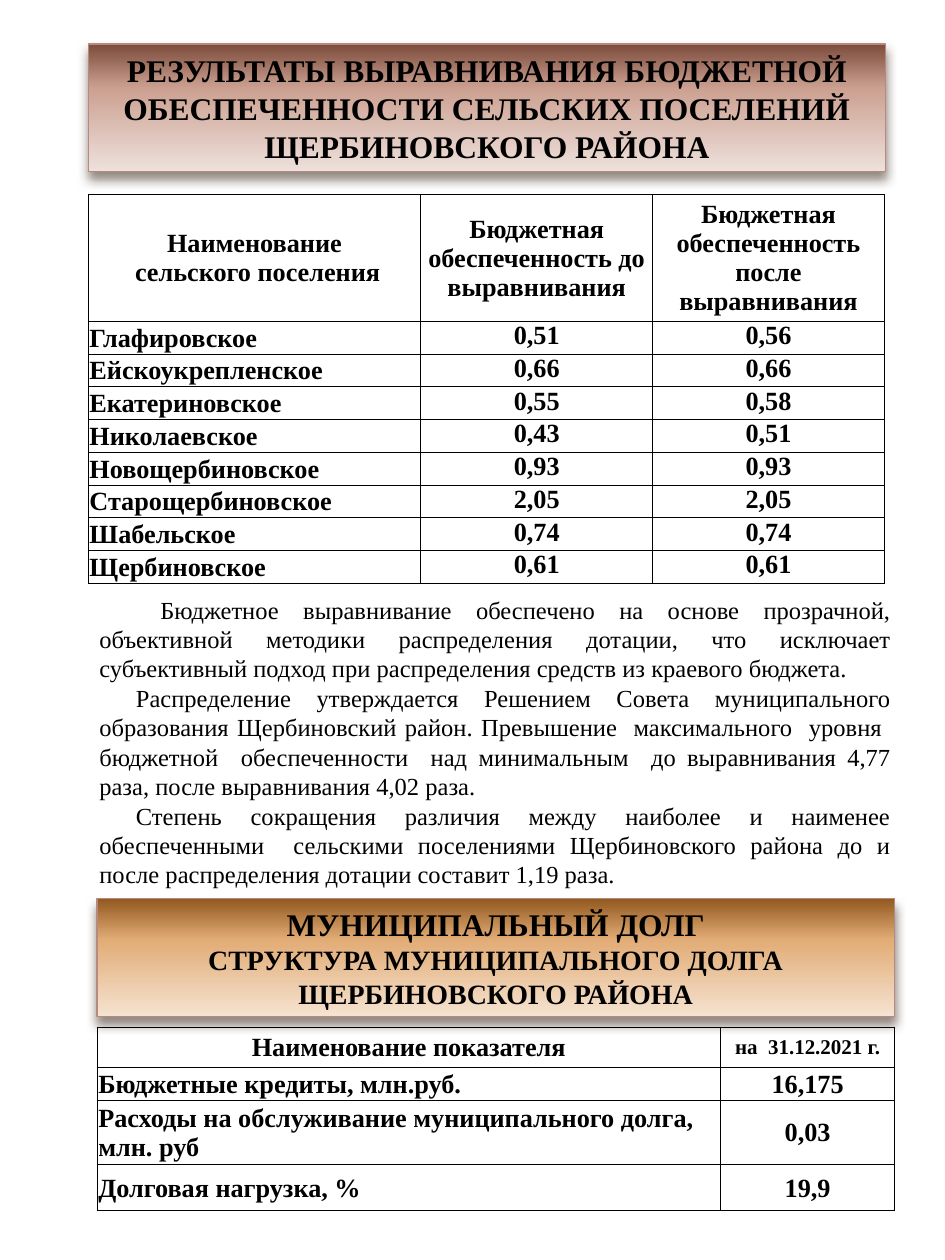
import dataclasses

import pptx
import pptx.dml.color
import pptx.enum.shapes
import pptx.enum.text
import pptx.oxml
import pptx.oxml.ns
import pptx.util

Inches = pptx.util.Inches
Pt = pptx.util.Pt
Align = pptx.enum.text.PP_ALIGN
Anchor = pptx.enum.text.MSO_ANCHOR
NAMESPACE = pptx.oxml.ns.nsdecls("a")


@dataclasses.dataclass(frozen=True)
class Theme:
    font: str = "Times New Roman"
    ink: str = "000000"
    banner_line: str = "B58B80"
    shadow: str = "4E3B30"
    brown: tuple = ((0, "7C4B3B"), (35, "CCA192"), (100, "EEE0DB"))
    orange: tuple = ((0, "91581F"), (35, "E2AC76"), (100, "F5E3D1"))
    heading: int = 18
    subheading: int = 16
    table: int = 15
    body: int = 14
    small: int = 12
    banner_line_width: float = 0.79
    border_width: float = 0.5


RESULTS_HEADER = [
    "Наименование\n сельского поселения",
    "Бюджетная обеспеченность до выравнивания",
    "Бюджетная обеспеченность после выравнивания",
]
RESULTS = [
    ["Глафировское", "0,51", "0,56"],
    ["Ейскоукрепленское", "0,66", "0,66"],
    ["Екатериновское", "0,55", "0,58"],
    ["Николаевское", "0,43", "0,51"],
    ["Новощербиновское", "0,93", "0,93"],
    ["Старощербиновское", "2,05", "2,05"],
    ["Шабельское", "0,74", "0,74"],
    ["Щербиновское", "0,61", "0,61"],
]
DEBT = [
    ["Наименование показателя", "на  31.12.2021 г."],
    ["Бюджетные кредиты, млн.руб.", "16,175"],
    ["Расходы на обслуживание муниципального долга,\nмлн. руб", "0,03"],
    ["Долговая нагрузка, %", "19,9"],
]
EXPLANATION = [
    " Бюджетное выравнивание обеспечено на основе прозрачной, объективной методики "
    "распределения дотации, что исключает субъективный подход при распределения "
    "средств из краевого бюджета.",
    "Распределение утверждается Решением Совета муниципального образования "
    "Щербиновский район. Превышение  максимального  уровня  бюджетной  "
    "обеспеченности  над минимальным  до выравнивания 4,77 раза, после "
    "выравнивания 4,02 раза.",
    "Степень  сокращения  различия  между  наиболее  и  наименее обеспеченными  "
    "сельскими поселениями Щербиновского района до и после распределения дотации "
    "составит 1,19 раза.",
]


class SlideBuilder:
    def __init__(self, slide, theme):
        self.slide = slide
        self.theme = theme

    def set_text(self, frame, lines, size, bold=True, align=Align.CENTER):
        """Fill a text frame with one paragraph per line."""
        frame.word_wrap = True
        for index, line in enumerate(lines):
            para = frame.paragraphs[0] if index == 0 else frame.add_paragraph()
            para.text = line
            para.alignment = align
            para.font.name = self.theme.font
            para.font.size = Pt(size)
            para.font.bold = bold
            para.font.color.rgb = pptx.dml.color.RGBColor.from_string(self.theme.ink)

    def format_banner(self, box, stops, lines):
        """Give a box the gradient, outline, shadow and heading text of a banner."""
        box.fill.gradient()
        box.fill.gradient_angle = 270
        stop_list = box._element.spPr.find(".//" + pptx.oxml.ns.qn("a:gsLst"))
        for old_stop in list(stop_list):
            stop_list.remove(old_stop)
        for position, color in stops:
            stop_list.append(pptx.oxml.parse_xml(
                f'<a:gs {NAMESPACE} pos="{position * 1000}"><a:srgbClr val="{color}"/></a:gs>'))
        box.line.color.rgb = pptx.dml.color.RGBColor.from_string(self.theme.banner_line)
        box.line.width = Pt(self.theme.banner_line_width)
        box.shadow.inherit = False
        effects = box._element.spPr.find(pptx.oxml.ns.qn("a:effectLst"))
        effects.append(pptx.oxml.parse_xml(
            f'<a:outerShdw {NAMESPACE} blurRad="{Pt(6)}" dist="{Pt(4)}" dir="5400000" '
            f'rotWithShape="0"><a:srgbClr val="{self.theme.shadow}">'
            '<a:alpha val="60000"/></a:srgbClr></a:outerShdw>'))
        frame = box.text_frame
        frame.auto_size = pptx.enum.text.MSO_AUTO_SIZE.NONE
        frame.vertical_anchor = Anchor.MIDDLE
        self.set_text(frame, lines, self.theme.heading)
        for para in frame.paragraphs[1:]:
            para.font.size = Pt(self.theme.subheading)

    def title_banner(self, left, top, width, height, stops, lines):
        title = self.slide.shapes.title
        title.left, title.top = Inches(left), Inches(top)
        title.width, title.height = Inches(width), Inches(height)
        self.format_banner(title, stops, lines)

    def banner(self, left, top, width, height, stops, lines):
        box = self.slide.shapes.add_shape(
            pptx.enum.shapes.MSO_SHAPE.RECTANGLE,
            Inches(left), Inches(top), Inches(width), Inches(height))
        self.format_banner(box, stops, lines)

    def body_text(self, left, top, width, height, lines):
        box = self.slide.shapes.add_textbox(
            Inches(left), Inches(top), Inches(width), Inches(height))
        self.set_text(box.text_frame, lines, self.theme.body, False, Align.JUSTIFY)
        for para in box.text_frame.paragraphs:
            para._p.get_or_add_pPr().set("indent", str(Inches(0.29)))

    def border(self, cell):
        properties = cell._tc.get_or_add_tcPr()
        for index, side in enumerate(("lnL", "lnR", "lnT", "lnB")):
            properties.insert(index, pptx.oxml.parse_xml(
                f'<a:{side} {NAMESPACE} w="{Pt(self.theme.border_width)}"><a:solidFill>'
                f'<a:srgbClr val="{self.theme.ink}"/></a:solidFill></a:{side}>'))

    def table(self, left, top, widths, heights, rows, values_at_top=False):
        """Add a bordered table; its first row and value columns are centred."""
        table = self.slide.shapes.add_table(
            len(rows), len(widths), Inches(left), Inches(top),
            Inches(sum(widths)), Inches(sum(heights))).table
        table.first_row = table.horz_banding = False
        for column, width in zip(table.columns, widths):
            column.width = Inches(width)
        for row_index, (texts, height) in enumerate(zip(rows, heights)):
            table.rows[row_index].height = Inches(height)
            for column_index, text in enumerate(texts):
                cell = table.cell(row_index, column_index)
                at_top = values_at_top and row_index > 0 and column_index > 0
                margin = Inches(0 if at_top else 0.01)
                cell.margin_left = cell.margin_right = cell.margin_top = margin
                cell.margin_bottom = 0
                cell.vertical_anchor = Anchor.TOP if at_top else Anchor.MIDDLE
                cell.fill.background()
                self.border(cell)
                is_label = row_index > 0 and column_index == 0
                self.set_text(cell.text_frame, text.split("\n"), self.theme.table,
                              align=Align.LEFT if is_label else Align.CENTER)
        return table


def main():
    deck = pptx.Presentation()
    deck.slide_width, deck.slide_height = Inches(7.5), Inches(10)
    theme = Theme()
    page = SlideBuilder(deck.slides.add_slide(deck.slide_layouts[5]), theme)

    page.title_banner(0.7, 0.35, 6.33, 1.01, theme.brown, [
        "РЕЗУЛЬТАТЫ ВЫРАВНИВАНИЯ БЮДЖЕТНОЙ ОБЕСПЕЧЕННОСТИ "
        "СЕЛЬСКИХ ПОСЕЛЕНИЙ ЩЕРБИНОВСКОГО РАЙОНА"])
    page.table(0.7, 1.54, [2.64, 1.84, 1.84], [1.01] + [0.26] * len(RESULTS),
               [RESULTS_HEADER] + RESULTS, values_at_top=True)
    page.body_text(0.69, 4.67, 6.48, 2.46, EXPLANATION)
    page.banner(0.77, 7.13, 6.33, 0.94, theme.orange, [
        "МУНИЦИПАЛЬНЫЙ ДОЛГ",
        "СТРУКТУРА МУНИЦИПАЛЬНОГО ДОЛГА ЩЕРБИНОВСКОГО РАЙОНА"])
    debt_table = page.table(0.77, 8.15, [4.95, 1.38], [0.32, 0.26, 0.51, 0.37], DEBT)
    date_para = debt_table.cell(0, 1).text_frame.paragraphs[0]
    date_para.font.size = Pt(theme.small)

    deck.save("out.pptx")


if __name__ == "__main__":
    main()
